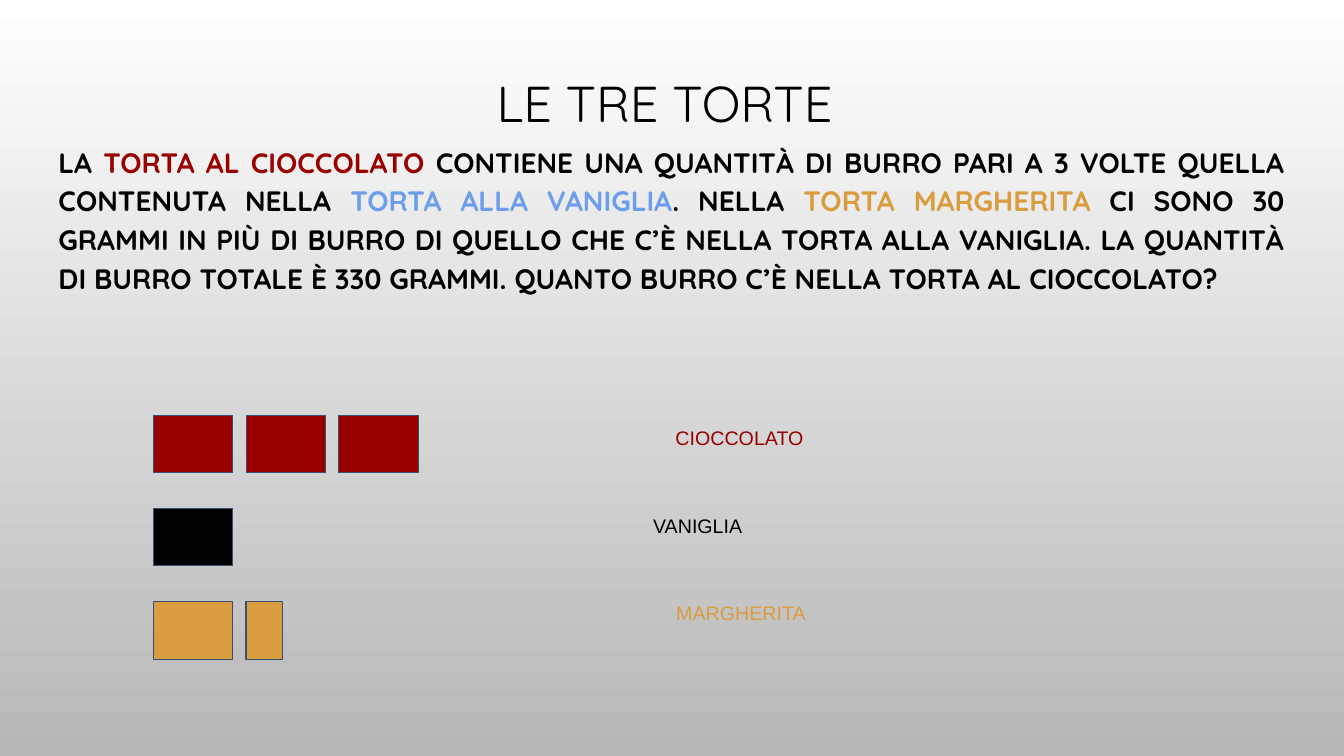
from pptx import Presentation
from pptx.dml.color import RGBColor
from pptx.enum.shapes import MSO_SHAPE as Shape
from pptx.enum.text import MSO_ANCHOR as Anchor, MSO_AUTO_SIZE as Fit, PP_ALIGN as Align
from pptx.util import Inches, Pt

COLORS = {
    "white": "FFFFFF",
    "gray": "B7B7B7",
    "black": "000000",
    "red": "990000",
    "cocoa": "980000",
    "blue": "6D9EEB",
    "gold": "D99C3F",
    "edge": "355071",
}

PROBLEM = [
    ("LA", "black"),
    (" TORTA AL CIOCCOLATO ", "red"),
    ("CONTIENE UNA QUANTITÀ DI BURRO PARI A 3 VOLTE QUELLA CONTENUTA NELLA ", "black"),
    ("TORTA ALLA VANIGLIA", "blue"),
    (". NELLA ", "black"),
    ("TORTA MARGHERITA", "gold"),
    (" CI SONO 30 GRAMMI IN PIÙ DI BURRO DI QUELLO CHE C’È NELLA TORTA ALLA VANIGLIA. "
     "LA QUANTITÀ DI BURRO TOTALE È 330 GRAMMI. "
     "QUANTO BURRO C’È NELLA TORTA AL CIOCCOLATO?", "black"),
]

CAKES = [
    ("CIOCCOLATO", "cocoa", [0.79, 0.79, 0.79], 2.81),
    ("VANIGLIA", "black", [0.79], 1.98),
    ("MARGHERITA", "gold", [0.79, 0.36], 2.84),
]


def color(name):
    return RGBColor.from_string(COLORS[name])


def write(shape, parts, size, font="Quicksand", bold=False,
          align=Align.CENTER, pitch=1.0, inset=None):
    frame = shape.text_frame
    frame.word_wrap = True
    frame.auto_size = Fit.NONE
    frame.vertical_anchor = Anchor.TOP
    if inset is not None:
        frame.margin_left = frame.margin_right = Inches(inset)
        frame.margin_top = frame.margin_bottom = Inches(inset)
    para = frame.paragraphs[0]
    para.alignment = align
    para.line_spacing = pitch
    para.space_before = Pt(0)
    for text, name in parts:
        run = para.add_run()
        run.text = text
        run.font.name = font
        run.font.size = Pt(size)
        run.font.bold = bold
        run.font.color.rgb = color(name)


def add_box(slide, left, top, width, height):
    return slide.shapes.add_textbox(
        Inches(left), Inches(top), Inches(width), Inches(height))


def add_bar(slide, left, top, width, name):
    bar = slide.shapes.add_shape(
        Shape.RECTANGLE, Inches(left), Inches(top), Inches(width), Inches(0.57))
    bar.shadow.inherit = False
    bar.fill.solid()
    bar.fill.fore_color.rgb = color(name)
    bar.line.color.rgb = color("edge")
    bar.line.width = Pt(0.75)


def add_cake(slide, row, label, name, widths, span):
    for col, width in enumerate(widths):
        add_bar(slide, 1.52 + 0.92 * col, 4.12 + 0.925 * row, width, name)
    box = add_box(slide, 5.93, 4.18 + 0.865 * row, span, 0.41)
    write(box, [(label, name)], 14, font="Arial")


def paint(slide):
    fill = slide.background.fill
    fill.gradient()
    fill.gradient_angle = 270
    for stop, name, place in zip(fill.gradient_stops, ("white", "gray"), (0, 1)):
        stop.color.rgb = color(name)
        stop.position = place


def add_title(slide, text):
    title = slide.shapes.title
    title.left, title.top = Inches(0.45), Inches(0.65)
    title.width, title.height = Inches(12.42), Inches(0.84)
    write(title, [(text, "black")], 36, pitch=0.9, inset=0.13)


def main():
    deck = Presentation()
    deck.slide_width = Inches(13.33)
    deck.slide_height = Inches(7.5)
    slide = deck.slides.add_slide(deck.slide_layouts[5])
    paint(slide)
    add_title(slide, "LE TRE TORTE ")
    body = add_box(slide, 0.45, 1.26, 12.42, 4.98)
    write(body, PROBLEM, 20, bold=True, align=Align.JUSTIFY, pitch=1.15, inset=0.13)
    for row, cake in enumerate(CAKES):
        add_cake(slide, row, *cake)
    deck.save("out.pptx")


if __name__ == "__main__":
    main()
